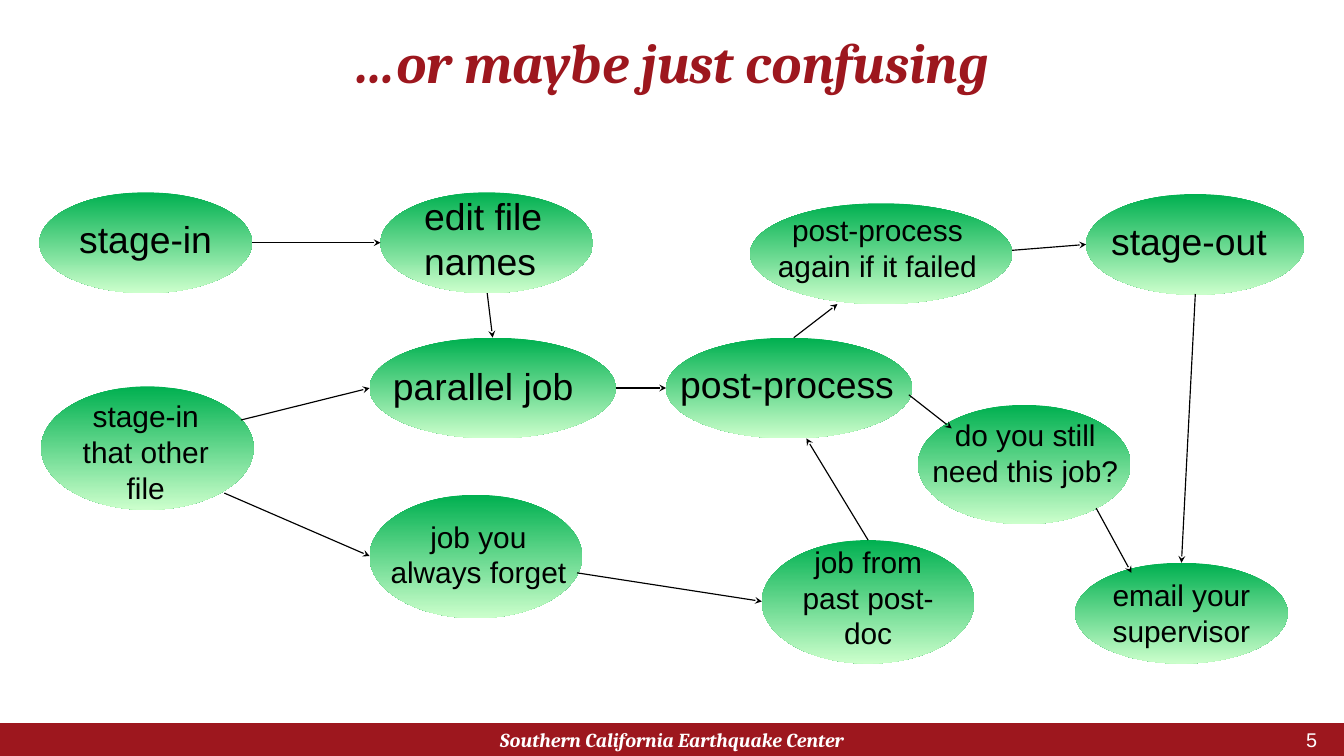
"""Build a workflow slide of job ellipses joined by arrows."""
from typing import NamedTuple, Optional

import lxml.etree
import pptx
import pptx.dml.color
import pptx.enum.shapes
import pptx.enum.text
import pptx.oxml.ns
import pptx.util

COLUMNS, ROWS = 16, 9
CELL = pptx.util.Inches(1)
COLORS = {"crimson": "9D171E", "white": "FFFFFF", "black": "000000",
          "green": "00B050", "mint": "CCFFCC"}
LARGE, SMALL = 32, 25.6
ALIGN = pptx.enum.text.PP_ALIGN
ANCHOR = pptx.enum.text.MSO_ANCHOR
SHAPES = pptx.enum.shapes.MSO_SHAPE


class Area(NamedTuple):
    column: float
    row: float
    columns: float
    rows: float


class Job(NamedTuple):
    text: str
    ellipse: Area
    label: Area
    size: float = SMALL
    align: ALIGN = ALIGN.CENTER


class Arrow(NamedTuple):
    start: tuple[float, float]
    end: tuple[float, float]
    from_top_of: Optional[str] = None
    to_top_of: Optional[str] = None


JOBS = [
    Job("stage-in", Area(0.47, 2.29, 2.53, 1.2), Area(0.67, 2.52, 2.13, 0.64), LARGE),
    Job("parallel job", Area(4.4, 4.02, 2.93, 1.2), Area(4.58, 4.27, 2.67, 0.64),
        LARGE, ALIGN.LEFT),
    Job("post-process again if it failed", Area(8.93, 2.42, 3.12, 1.2),
        Area(8.98, 2.47, 2.93, 0.96)),
    Job("stage-out", Area(12.93, 2.31, 2.6, 1.2), Area(13.13, 2.55, 2.33, 0.64),
        LARGE, ALIGN.LEFT),
    Job("stage-in that other file", Area(0.49, 4.6, 2.53, 1.47),
        Area(0.67, 4.69, 2.13, 1.39)),
    Job("edit file names", Area(4.53, 2.29, 2.53, 1.2), Area(4.95, 2.25, 2.13, 1.18),
        LARGE, ALIGN.LEFT),
    Job("job you always forget", Area(4.4, 5.89, 2.53, 1.47),
        Area(4.53, 6.12, 2.33, 0.96)),
    Job("job from past post-doc", Area(9.07, 6.43, 2.53, 1.47),
        Area(9.27, 6.42, 2.13, 1.39)),
    Job("post-process", Area(7.93, 4.02, 2.93, 1.2), Area(8, 4.25, 2.93, 0.64),
        LARGE, ALIGN.LEFT),
    Job("email your supervisor", Area(12.8, 6.7, 2.53, 1.2), Area(13, 6.82, 2.13, 0.96)),
    Job("do you still need this job?", Area(10.93, 4.82, 2.53, 1.42),
        Area(10.87, 4.91, 2.67, 0.96)),
]

ARROWS = [
    Arrow((3, 2.89), (4.53, 2.89)),
    Arrow((2.87, 5), (4.4, 4.62)),
    Arrow((2.67, 5.87), (4.4, 6.62)),
    Arrow((5.8, 3.49), (5.87, 4.02), to_top_of="parallel job"),
    Arrow((10.33, 6.42), (9.6, 5.22), from_top_of="job from past post-doc"),
    Arrow((7.33, 4.62), (7.93, 4.62)),
    Arrow((6.87, 6.82), (9.07, 7.16)),
    Arrow((9.45, 4.02), (9.97, 3.62)),
    Arrow((12.05, 2.98), (12.93, 2.91)),
    Arrow((14.23, 3.5), (14.07, 6.69), to_top_of="email your supervisor"),
    Arrow((13.05, 6.05), (13.47, 6.82)),
    Arrow((10.82, 4.7), (11.33, 5.1)),
]


def color(name: str) -> pptx.dml.color.RGBColor:
    return pptx.dml.color.RGBColor.from_string(COLORS[name])


def cells(*lengths: float) -> list[int]:
    return [round(length * CELL) for length in lengths]


def add_text(slide, text: str, area: Area, *, size: float, ink: str = "black",
             font: str = "Arial", align: ALIGN = ALIGN.CENTER, strong: bool = False,
             anchor: ANCHOR = ANCHOR.TOP, margins: tuple[float, float] = (0.12, 0.06),
             spacing: float = 1.0, grow: bool = False) -> None:
    frame = slide.shapes.add_textbox(*cells(*area)).text_frame
    frame.word_wrap = True
    frame.vertical_anchor = anchor
    frame.margin_left = frame.margin_right = cells(margins[0])[0]
    frame.margin_top = frame.margin_bottom = cells(margins[1])[0]
    if grow:
        frame.auto_size = pptx.enum.text.MSO_AUTO_SIZE.SHAPE_TO_FIT_TEXT
    paragraph = frame.paragraphs[0]
    paragraph.alignment = align
    paragraph.line_spacing = spacing
    run = paragraph.add_run()
    run.text = text
    run.font.name = font
    run.font.size = pptx.util.Pt(size)
    run.font.bold = run.font.italic = strong
    run.font.color.rgb = color(ink)


def add_plain_shape(slide, kind: SHAPES, area: Area):
    shape = slide.shapes.add_shape(kind, *cells(*area))
    shape.shadow.inherit = False
    shape.line.fill.background()
    return shape


def add_job(slide, job: Job):
    ellipse = add_plain_shape(slide, SHAPES.OVAL, job.ellipse)
    ellipse.fill.gradient()
    ellipse.fill.gradient_angle = 270
    for stop, position, name in zip(ellipse.fill.gradient_stops, (0, 1), ("green", "mint")):
        stop.position = position
        stop.color.rgb = color(name)
    add_text(slide, job.text, job.label, size=job.size, align=job.align,
             margins=(0.1, 0.05), grow=True)
    return ellipse


def add_arrow(slide, arrow: Arrow, ellipses: dict) -> None:
    connector = slide.shapes.add_connector(
        pptx.enum.shapes.MSO_CONNECTOR.STRAIGHT, *cells(*arrow.start, *arrow.end))
    if arrow.from_top_of:
        connector.begin_connect(ellipses[arrow.from_top_of], 0)
    if arrow.to_top_of:
        connector.end_connect(ellipses[arrow.to_top_of], 0)
    connector.line.color.rgb = color("black")
    connector.line.width = pptx.util.Pt(1)
    qn = pptx.oxml.ns.qn
    properties = connector.element.spPr
    lxml.etree.SubElement(properties.find(qn("a:ln")), qn("a:tailEnd"), type="stealth")
    lxml.etree.SubElement(properties, qn("a:effectLst"))


def main() -> None:
    deck = pptx.Presentation()
    deck.slide_width, deck.slide_height = cells(COLUMNS, ROWS)
    slide = deck.slides.add_slide(deck.slide_layouts[6])

    footer_bar = add_plain_shape(slide, SHAPES.RECTANGLE, Area(0, 8.61, COLUMNS, 0.39))
    footer_bar.fill.solid()
    footer_bar.fill.fore_color.rgb = color("crimson")
    add_text(slide, "…or maybe just confusing", Area(0.4, 0.36, 15.2, 0.84), size=47.7,
             ink="crimson", font="Cambria", strong=True, spacing=0.9)
    add_text(slide, "5", Area(14.3, 8.69, 1.5, 0.24), size=17, ink="white",
             align=ALIGN.RIGHT, anchor=ANCHOR.MIDDLE)
    add_text(slide, "Southern California Earthquake Center", Area(5.3, 8.57, 5.4, 0.48),
             size=17, ink="white", font="Cambria", strong=True, anchor=ANCHOR.MIDDLE)

    ellipses = {job.text: add_job(slide, job) for job in JOBS}
    for arrow in ARROWS:
        add_arrow(slide, arrow, ellipses)
    deck.save("out.pptx")


if __name__ == "__main__":
    main()
